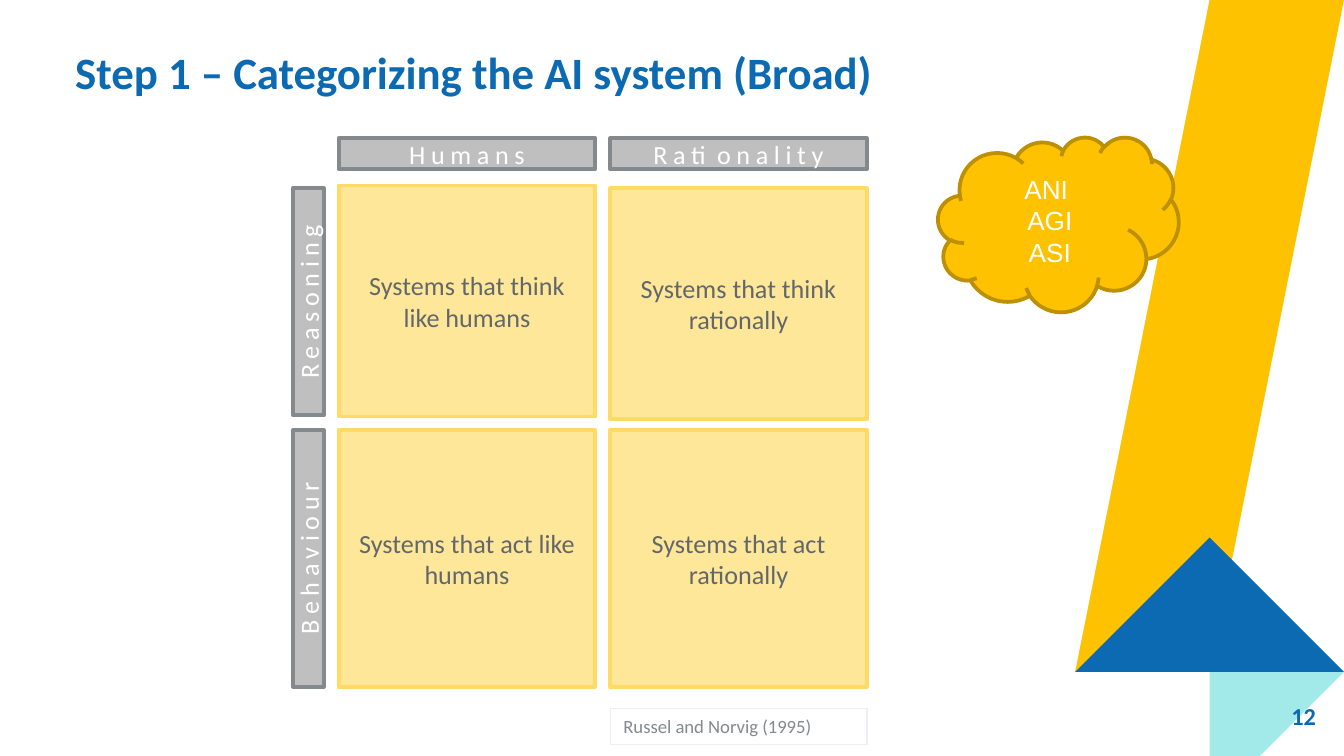
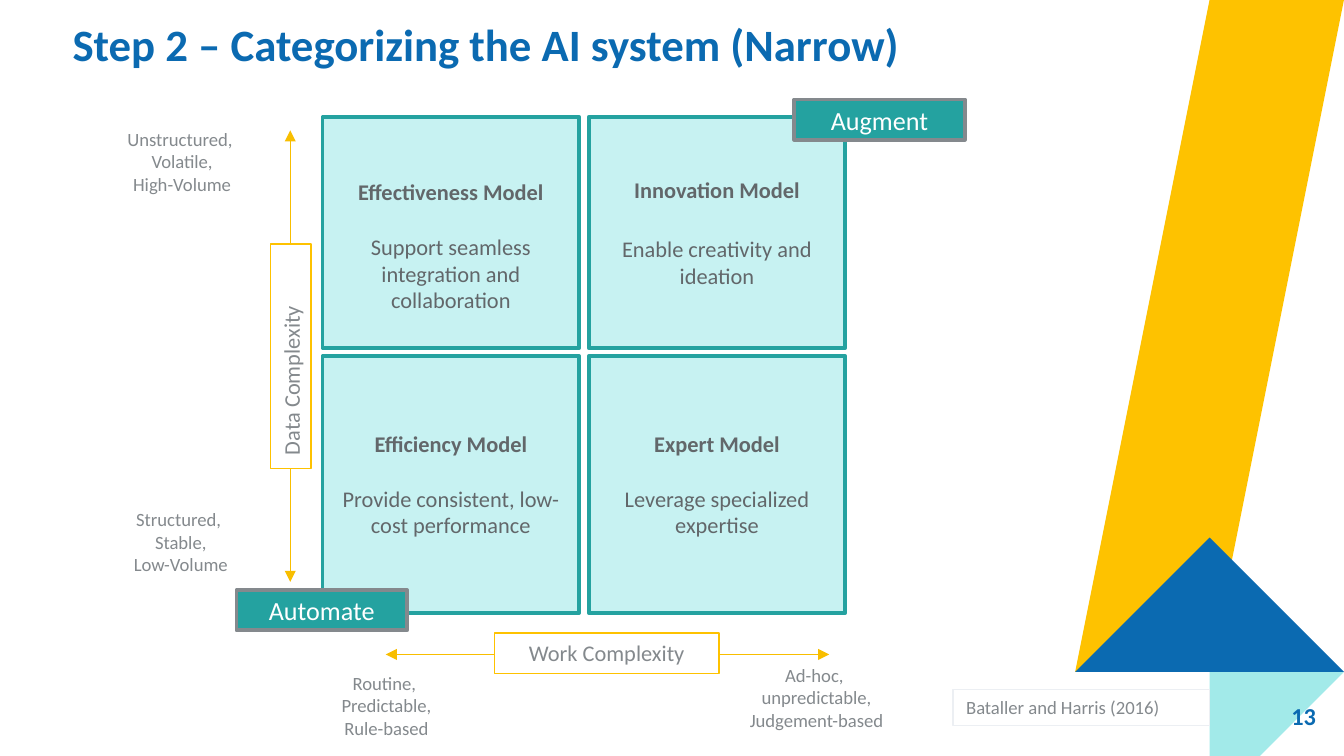
from lxml.etree import SubElement
from pptx import Presentation
from pptx.dml.color import RGBColor
from pptx.enum.shapes import MSO_CONNECTOR, MSO_SHAPE
from pptx.enum.text import MSO_ANCHOR, PP_ALIGN
from pptx.oxml.ns import qn
from pptx.util import Inches, Pt

WHITE = RGBColor(0xFF, 0xFF, 0xFF)
BLUE = RGBColor(0x0B, 0x6A, 0xB1)
YELLOW = RGBColor(0xFE, 0xC2, 0x00)
DARK_YELLOW = RGBColor(0xBC, 0x90, 0x00)
ARROW_YELLOW = RGBColor(0xF8, 0xBE, 0x00)
PALE_YELLOW = RGBColor(0xFF, 0xE7, 0x99)
SOFT_YELLOW = RGBColor(0xFF, 0xDB, 0x65)
AQUA = RGBColor(0xA2, 0xEA, 0xE9)
PALE_TEAL = RGBColor(0xC7, 0xF2, 0xF2)
TEAL = RGBColor(0x24, 0xA2, 0xA0)
TEXT_GREY = RGBColor(0x62, 0x67, 0x6A)
GREY = RGBColor(0x84, 0x89, 0x8D)
SILVER = RGBColor(0xBF, 0xBF, 0xBF)
MIST = RGBColor(0xEC, 0xEF, 0xF3)

RIBBON = (
    (YELLOW, ((9.18, 0), (9.57, 0), (8.76, 4.56), (8.35, 4.71))),
    (AQUA, ((9.09, 5.625), (9.26, 4.74), (9.67, 4.59), (9.47, 5.625))),
    (BLUE, ((8.35, 4.71), (9.35, 4.31), (9.67, 4.59), (8.67, 4.99))),
)
CELL_WIDTH = 1.91
CELL_HEIGHTS = (1.72, 1.91)


def write(shape, text, size, color, font="Calibri", bold=False,
          align=PP_ALIGN.CENTER, anchor=MSO_ANCHOR.MIDDLE, spacing=0):
    text_frame = shape.text_frame
    text_frame.text = text
    text_frame.word_wrap = True
    text_frame.vertical_anchor = anchor
    for paragraph in text_frame.paragraphs:
        paragraph.alignment = align
        for run in paragraph.runs:
            run.font.name = font
            run.font.size = Pt(size)
            run.font.bold = bold
            run.font.color.rgb = color
            if spacing:
                run._r.get_or_add_rPr().set("spc", str(spacing * 100))
    return text_frame


def add_text(slide, box, text, size, color, **style):
    shape = slide.shapes.add_textbox(*map(Inches, box))
    return write(shape, text, size, color, **style)


def add_box(slide, box, text, size, color, fill, line, line_width=2,
            kind=MSO_SHAPE.RECTANGLE, rotation=0, **style):
    shape = slide.shapes.add_shape(kind, *map(Inches, box))
    shape.shadow.inherit = False
    shape.rotation = rotation
    if fill is None:
        shape.fill.background()
    else:
        shape.fill.solid()
        shape.fill.fore_color.rgb = fill
    shape.line.color.rgb = line
    shape.line.width = Pt(line_width)
    return write(shape, text, size, color, **style)


def remove_margins(text_frame):
    text_frame.margin_left = text_frame.margin_right = 0
    text_frame.margin_top = text_frame.margin_bottom = 0


def add_ribbon(slide):
    for color, points in RIBBON:
        builder = slide.shapes.build_freeform(*points[0], scale=Inches(1))
        builder.add_line_segments(points[1:], close=True)
        shape = builder.convert_to_shape()
        shape.shadow.inherit = False
        shape.fill.solid()
        shape.fill.fore_color.rgb = color
        shape.line.fill.background()


def add_base_slide(presentation, title, title_left, title_top, number):
    slide = presentation.slides.add_slide(presentation.slide_layouts[6])
    add_ribbon(slide)
    title_frame = add_text(slide, (title_left, title_top, 7.76, 0.43), title, 24, BLUE,
                           bold=True, align=PP_ALIGN.LEFT, anchor=MSO_ANCHOR.BOTTOM)
    title_frame.paragraphs[0].line_spacing = 0.8
    remove_margins(title_frame)
    remove_margins(add_text(slide, (9.19, 5.11, 0.6, 0.43), number, 13, BLUE,
                            bold=True, align=PP_ALIGN.RIGHT))
    return slide


def add_citation(slide, left, top, text):
    add_box(slide, (left, top, CELL_WIDTH, 0.27), text, 10, GREY, None, MIST, 0.75,
            align=PP_ALIGN.LEFT, anchor=MSO_ANCHOR.TOP)


def add_header(slide, box, text, rotation=0):
    add_box(slide, box, text, 14, WHITE, SILVER, GREY, rotation=rotation, spacing=3)


def add_model(slide, left, top, height, name, description, gap, top_margin):
    text_frame = add_box(slide, (left, top, CELL_WIDTH, height), f"{name}\n{description}",
                         12, TEXT_GREY, PALE_TEAL, TEAL)
    text_frame.margin_top = Inches(top_margin)
    heading = text_frame.paragraphs[0]
    heading.space_after = Pt(gap)
    heading.runs[0].font.bold = True


def add_tag(slide, left, top, text):
    add_box(slide, (left, top, 1.27, 0.3), text, 14, WHITE, TEAL, GREY)


def add_axis(slide, start, end):
    connector = slide.shapes.add_connector(MSO_CONNECTOR.STRAIGHT, *map(Inches, start + end))
    connector.line.color.rgb = ARROW_YELLOW
    connector.line.width = Pt(0.75)
    line = connector.line._get_or_add_ln()
    for tag in ("a:headEnd", "a:tailEnd"):
        SubElement(line, qn(tag), type="triangle")
    SubElement(connector._element.spPr, qn("a:effectLst"))


def add_axis_name(slide, left, top, text, align, rotation=0):
    add_box(slide, (left, top, 1.67, 0.3), text, 12, GREY, WHITE, YELLOW, 0.75,
            rotation=rotation, align=align, anchor=MSO_ANCHOR.TOP)


def build_broad_slide(presentation):
    slide = add_base_slide(presentation, "Step 1 – Categorizing the AI system (Broad)",
                           0.56, 0.3, "12")
    columns = (2.52, 4.54)
    systems = (
        (0, 1.38, 0, "Systems that think like humans"),
        (1, 1.4, 0, "Systems that think rationally"),
        (0, 3.2, 1, "Systems that act like humans"),
        (1, 3.2, 1, "Systems that act rationally"),
    )
    for column, top, row, text in systems:
        add_box(slide, (columns[column], top, CELL_WIDTH, CELL_HEIGHTS[row]), text, 14,
                TEXT_GREY, PALE_YELLOW, SOFT_YELLOW)
    for left, text in zip(columns, ("Humans", "Rationality")):
        add_header(slide, (left, 1.03, CELL_WIDTH, 0.23), text)
    add_header(slide, (1.45, 2.13, 1.69, 0.23), "Reasoning", 270)
    add_header(slide, (1.34, 4.04, 1.91, 0.23), "Behaviour", 270)
    add_citation(slide, columns[1], 5.27, "Russel and Norvig (1995)")
    add_box(slide, (6.98, 1.02, 1.79, 1.3), "ANI \nAGI\vASI", 14, WHITE, YELLOW,
            DARK_YELLOW, kind=MSO_SHAPE.CLOUD, font="Arial")


def build_narrow_slide(presentation):
    slide = add_base_slide(presentation, "Step 2 – Categorizing the AI system (Narrow)",
                           0.54, 0.09, "13")
    columns, rows = (2.4, 4.38), (0.87, 2.65)
    models = (
        ("Effectiveness Model", "Support seamless integration and collaboration", 14.65, 0.25),
        ("Innovation Model", "Enable creativity and ideation", 17.1, 0.05),
        ("Efficiency Model", "Provide consistent, low-cost performance", 14.65, 0.05),
        ("Expert Model", "Leverage specialized expertise", 14.65, 0.05),
    )
    for index, model in enumerate(models):
        row, column = divmod(index, 2)
        add_model(slide, columns[column], rows[row], CELL_HEIGHTS[row], *model)
    add_tag(slide, 5.91, 0.74, "Augment")
    add_citation(slide, 7.09, 5.13, "Bataller and Harris (2016)")
    add_tag(slide, 1.76, 4.39, "Automate")

    add_axis(slide, (2.16, 0.97), (2.16, 4.33))
    add_axis(slide, (6.17, 4.87), (2.87, 4.87))
    add_axis_name(slide, 1.33, 2.5, "Data Complexity", PP_ALIGN.LEFT, 270)
    add_axis_name(slide, 3.68, 4.71, "Work Complexity", PP_ALIGN.CENTER)
    axis_ends = (
        (5.24, 4.89, "Ad-hoc, \vunpredictable,\nJudgement-based"),
        (2.04, 4.95, "Routine, \vPredictable,\nRule-based"),
        (0.52, 0.9, "Unstructured, \vVolatile,\nHigh-Volume"),
        (0.51, 3.73, "Structured, \vStable,\nLow-Volume"),
    )
    for left, top, text in axis_ends:
        add_text(slide, (left, top, 1.67, 0.61), text, 10, GREY, anchor=MSO_ANCHOR.TOP)


def main():
    presentation = Presentation()
    presentation.slide_width = Inches(10)
    presentation.slide_height = Inches(5.625)
    build_broad_slide(presentation)
    build_narrow_slide(presentation)
    presentation.save("out.pptx")


if __name__ == "__main__":
    main()
